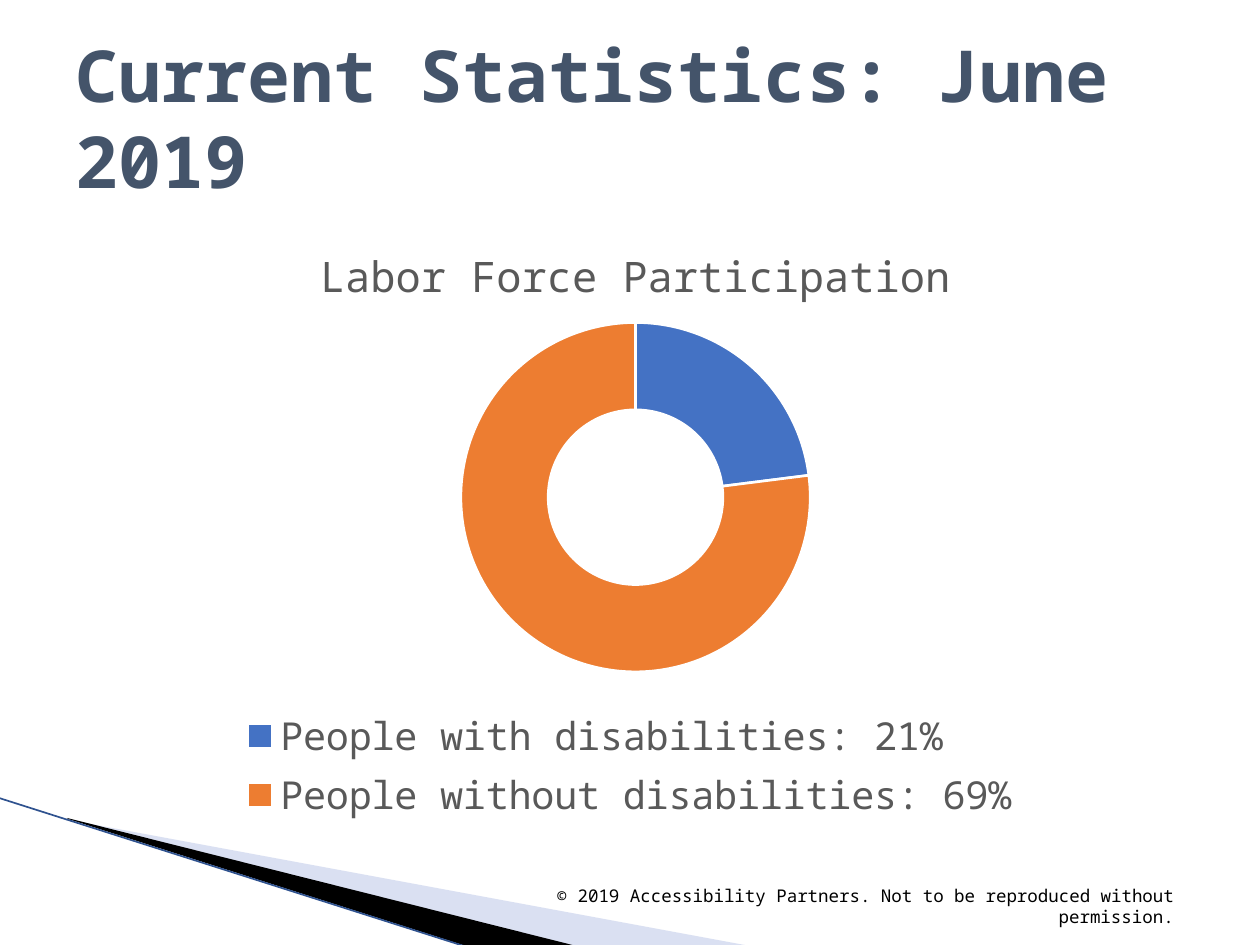
"""Build a slide with a doughnut chart of labor force participation."""
import lxml.etree
import pptx
import pptx.chart.data
import pptx.dml.color
import pptx.enum.chart
import pptx.enum.shapes
import pptx.enum.text
import pptx.oxml.ns
import pptx.util

RGBColor = pptx.dml.color.RGBColor
BLACK = RGBColor(0x00, 0x00, 0x00)
WHITE = RGBColor(0xFF, 0xFF, 0xFF)
SLATE = RGBColor(0x44, 0x54, 0x6A)
GRAY = RGBColor(0x59, 0x59, 0x59)
BLUE = RGBColor(0x44, 0x72, 0xC4)
ORANGE = RGBColor(0xED, 0x7D, 0x31)
NAVY = RGBColor(0x2F, 0x52, 0x8F)
PALE_BLUE = RGBColor(0xA4, 0xB3, 0xDF)


class SlideBuilder:
    FONT = "Noto Sans Mono"
    SCALE = 914400 / 126

    def __init__(self, slide):
        self.slide = slide

    def emu(self, *lengths):
        return [pptx.util.Emu(round(length * self.SCALE)) for length in lengths]

    def style(self, font, size, color, bold=False):
        font.name = self.FONT
        font.size = pptx.util.Pt(size)
        font.color.rgb = color
        font.bold = bold

    def add_child(self, parent, tag, **attributes):
        return lxml.etree.SubElement(parent, pptx.oxml.ns.qn(tag), attributes)

    def wedge(self, points, color, opacity=100):
        builder = self.slide.shapes.build_freeform(*points[0], scale=self.SCALE)
        builder.add_line_segments(points[1:], close=True)
        shape = builder.convert_to_shape()
        shape.shadow.inherit = False
        shape.fill.solid()
        shape.fill.fore_color.rgb = color
        shape.line.fill.background()
        if opacity < 100:
            fill_color = shape.fill._xPr.find(".//" + pptx.oxml.ns.qn("a:srgbClr"))
            self.add_child(fill_color, "a:alpha", val=str(opacity * 1000))

    def line(self, start, end, color, width):
        connector = self.slide.shapes.add_connector(
            pptx.enum.shapes.MSO_CONNECTOR.STRAIGHT, *self.emu(*start, *end))
        connector.line.color.rgb = color
        connector.line.width = pptx.util.Pt(width)
        self.add_child(connector._element.spPr, "a:effectLst")

    def text(self, box, wording, size, color, anchor, alignment, bold=False):
        frame = self.slide.shapes.add_textbox(*self.emu(*box)).text_frame
        frame.word_wrap = True
        frame.vertical_anchor = anchor
        paragraph = frame.paragraphs[0]
        paragraph.text = wording
        paragraph.alignment = alignment
        self.style(paragraph.font, size, color, bold)

    def place(self, parent, index, **fractions):
        tag = pptx.oxml.ns.qn("c:layout")
        for previous in parent.findall(tag):
            parent.remove(previous)
        layout = parent.makeelement(tag)
        parent.insert(index, layout)
        manual = self.add_child(layout, "c:manualLayout")
        if "w" in fractions:
            self.add_child(manual, "c:layoutTarget", val="inner")
        for axis in "xy":
            self.add_child(manual, f"c:{axis}Mode", val="edge")
        for name, fraction in fractions.items():
            self.add_child(manual, f"c:{name}", val=str(fraction))

    def doughnut(self, box, title, values, colors):
        data = pptx.chart.data.CategoryChartData()
        data.categories = list(values)
        data.add_series("Series 1", list(values.values()))
        chart = self.slide.shapes.add_chart(
            pptx.enum.chart.XL_CHART_TYPE.DOUGHNUT, *self.emu(*box), data).chart
        self.style(chart.font, 10, BLACK)
        chart.has_title = True
        paragraph = chart.chart_title.text_frame.paragraphs[0]
        paragraph.text = title
        self.style(paragraph.font, 24, GRAY)
        self.place(chart.chart_title._element, 1, x=0.22, y=0.05)
        chart.has_legend = True
        chart.legend.position = pptx.enum.chart.XL_LEGEND_POSITION.BOTTOM
        chart.legend.include_in_layout = False
        self.style(chart.legend.font, 22, GRAY)
        plot = chart.plots[0]
        plot.vary_by_categories = True
        plot._element.find(pptx.oxml.ns.qn("c:holeSize")).set("val", "75")
        self.place(plot._element.getparent(), 0, x=0.35, y=0.19, w=0.31, h=0.56)
        for index, color in enumerate(colors):
            point_format = plot.series[0].points[index].format
            point_format.fill.solid()
            point_format.fill.fore_color.rgb = color
            point_format.line.color.rgb = WHITE
            point_format.line.width = pptx.util.Pt(1.5)


def main():
    presentation = pptx.Presentation()
    presentation.slide_width = pptx.util.Inches(10)
    presentation.slide_height = pptx.util.Inches(7.5)
    builder = SlideBuilder(presentation.slides.add_slide(presentation.slide_layouts[6]))
    anchors = pptx.enum.text.MSO_ANCHOR
    alignments = pptx.enum.text.PP_ALIGN

    builder.wedge([(69, 820), (750, 946), (575, 946), (69, 819)], PALE_BLUE, 40)
    builder.wedge([(67, 818), (576, 946), (469, 947), (68, 819)], BLACK)
    builder.line((-1, 798), (467, 947), NAVY, 0.95)
    builder.text((63, 38, 1134, 158), "Current Statistics: June 2019", 41, SLATE,
                 anchors.MIDDLE, alignments.LEFT, bold=True)
    builder.doughnut((63, 204, 1134, 624), "Labor Force Participation",
                     {"People with disabilities: 21%": 23,
                      "People without disabilities: 69%": 77}, [BLUE, ORANGE])
    builder.text((451, 883, 735, 50),
                 "© 2019 Accessibility Partners. Not to be reproduced without permission.",
                 10, BLACK, anchors.BOTTOM, alignments.RIGHT)
    presentation.save("out.pptx")


if __name__ == "__main__":
    main()
